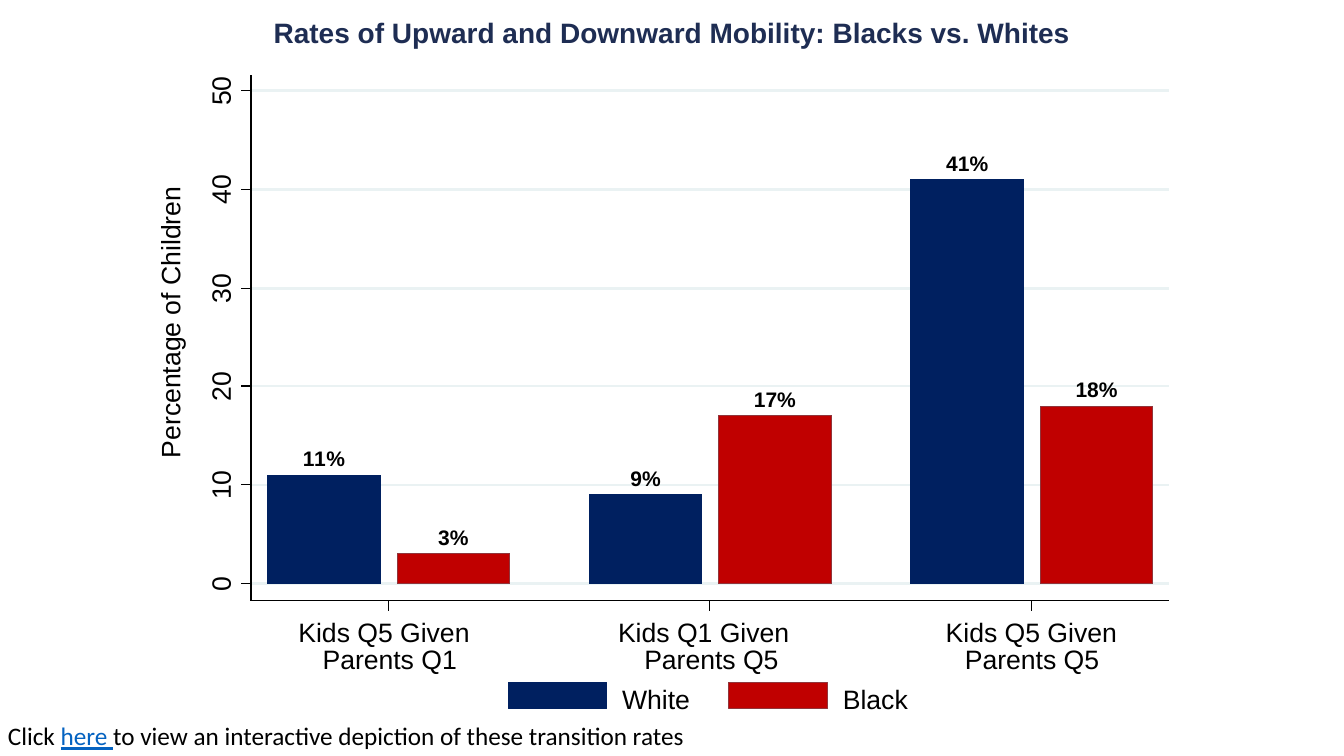
from lxml.etree import SubElement
from pptx import Presentation
from pptx.chart.data import CategoryChartData
from pptx.dml.color import RGBColor
from pptx.enum.chart import XL_CHART_TYPE, XL_LABEL_POSITION
from pptx.enum.shapes import MSO_CONNECTOR, MSO_SHAPE
from pptx.enum.text import MSO_AUTO_SIZE, PP_ALIGN
from pptx.oxml import parse_xml
from pptx.oxml.ns import nsdecls, qn
from pptx.util import Emu, Pt

PX = 9144
BLACK, NAVY, RED, MAROON = "000000", "002060", "C00000", "90353B"
GRID, TITLE, LINK = "EAF2F3", "1E2D53", "0563C1"

GROUPS = [("Kids Q5 Given", 296, "Parents Q1", 320),
          ("Kids Q1 Given", 613, "Parents Q5", 639),
          ("Kids Q5 Given", 938, "Parents Q5", 957)]
SERIES = [("White", (11, 9, 41), NAVY, NAVY, 504, 617),
          ("Black", (3, 17, 18), RED, MAROON, 723, 836)]
AXIS_LEFT, AXIS_RIGHT, AXIS_TOP, AXIS_BOTTOM = 249, 1159, 74, 596
ZERO, FIFTY = 579, 90
MIDDLE, GROUP_PITCH = 704, 319


def px(length):
    """Turn whole px into EMU."""
    return Emu(round(length * PX))


def color(code):
    """Turn a hex string into a colour."""
    return RGBColor.from_string(code)


class Board:
    """Holds the style and the current slide."""

    def __init__(self, page, font="Arial", size=19):
        """Remember the slide and its default text style."""
        self.page, self.font, self.size = page, font, size

    def line(self, x1, y1, x2, y2, shade=BLACK, width=0.88):
        """Draw a straight line."""
        rule = self.page.shapes.add_connector(
            MSO_CONNECTOR.STRAIGHT, px(x1), px(y1), px(x2), px(y2))
        rule.line.color.rgb = color(shade)
        rule.line.width = Pt(width)
        SubElement(rule.element.spPr, qn("a:effectLst"))

    def swatch(self, frame, fill, edge):
        """Draw a filled rectangle."""
        shape = self.page.shapes.add_shape(MSO_SHAPE.RECTANGLE, *map(px, frame))
        shape.shadow.inherit = False
        self.paint(shape, fill, edge)

    def paint(self, target, fill, edge):
        """Give a shape or a series its fill and hairline."""
        target.fill.solid()
        target.fill.fore_color.rgb = color(fill)
        target.line.color.rgb = color(edge)
        target.line.width = Pt(0)

    def text(self, frame, words, shade=BLACK, turn=0):
        """Place a one-line label without margins."""
        box = self.page.shapes.add_textbox(*map(px, frame))
        box.rotation = turn
        body = box.text_frame
        body.word_wrap = False
        body.auto_size = MSO_AUTO_SIZE.SHAPE_TO_FIT_TEXT
        body.margin_left = body.margin_right = body.margin_top = body.margin_bottom = 0
        body.text = words
        self.style(body.paragraphs[0].runs[0].font, shade)
        return box

    def style(self, font, shade, size=None, bold=False, name=None):
        """Set the look of a font."""
        font.name, font.size = name or self.font, Pt(size or self.size)
        font.bold, font.color.rgb = bold, color(shade)

    def heading(self, frame, words):
        """Place the centred slide title."""
        box = self.text(frame, words)
        body = box.text_frame
        body.word_wrap = True
        body.margin_left = body.margin_right = px(10)
        body.margin_top = body.margin_bottom = px(5)
        body.paragraphs[0].alignment = PP_ALIGN.CENTER
        self.style(body.paragraphs[0].runs[0].font, TITLE, 20, True)

    def footer(self, frame, pieces):
        """Place a line of differently coloured spans."""
        box = self.page.shapes.add_textbox(*map(px, frame))
        box.text_frame.word_wrap = False
        box.text_frame.auto_size = MSO_AUTO_SIZE.SHAPE_TO_FIT_TEXT
        for words, shade in pieces:
            span = box.text_frame.paragraphs[0].add_run()
            span.text = words
            self.style(span.font, shade, 18, name="Calibri")
            span.font.underline = shade == LINK

    def bars(self, frame):
        """Place the column chart so that its plot fills the frame."""
        data = CategoryChartData(number_format='0"%"')
        data.categories = [f"{kids} {parents}" for kids, _, parents, _ in GROUPS]
        for name, values, *_ in SERIES:
            data.add_series(name, values)
        chart = self.page.shapes.add_chart(
            XL_CHART_TYPE.COLUMN_CLUSTERED, *map(px, frame), data).chart
        chart.has_title = chart.has_legend = False
        self.style(chart.font, BLACK, 15, True)
        chart.value_axis.minimum_scale, chart.value_axis.maximum_scale = 0, 50
        chart.value_axis.has_major_gridlines = False
        chart.value_axis.visible = chart.category_axis.visible = False
        plot = chart.plots[0]
        plot.vary_by_categories = False
        plot.gap_width, plot.overlap = 71, -15
        plot.has_data_labels = True
        labels = plot.data_labels
        labels.show_value = True
        labels.number_format, labels.number_format_is_linked = '0"%"', False
        labels.position = XL_LABEL_POSITION.OUTSIDE_END
        self.style(labels.font, BLACK, 15, True)
        for series, (_, _, fill, edge, *_) in zip(plot.series, SERIES):
            series.invert_if_negative = False
            self.paint(series.format, fill, edge)
        self.fit_plot(chart)

    def fit_plot(self, chart):
        """Stretch the plot over the frame and clear the backgrounds."""
        area = chart.element.find(".//" + qn("c:plotArea"))
        for layout in area.findall(qn("c:layout")):
            area.remove(layout)
        settings = [("layoutTarget", "inner"), ("xMode", "edge"), ("yMode", "edge"),
                    ("x", 0), ("y", 0), ("w", 1), ("h", 1)]
        inner = "".join(f'<c:{tag} val="{value}"/>' for tag, value in settings)
        area.insert(0, parse_xml(
            f'<c:layout {nsdecls("c")}><c:manualLayout>{inner}</c:manualLayout></c:layout>'))
        clear = (f'<c:spPr {nsdecls("c", "a")}><a:noFill/>'
                 '<a:ln><a:noFill/></a:ln></c:spPr>')
        area.append(parse_xml(clear))
        chart.element.find(qn("c:chart")).addnext(parse_xml(clear))


def main():
    """Build the mobility slide."""
    deck = Presentation()
    deck.slide_width, deck.slide_height = px(1333), px(750)
    board = Board(deck.slides.add_slide(deck.slide_layouts[6]))

    ticks = [(value, round(ZERO + (FIFTY - ZERO) * value / 50))
             for value in range(0, 51, 10)]
    for _, y in ticks:
        board.line(AXIS_LEFT, y, AXIS_RIGHT, y, GRID, 1.75)
    width = 3 * GROUP_PITCH
    board.bars((MIDDLE - width // 2, FIFTY, width, ZERO - FIFTY))

    board.line(AXIS_LEFT, AXIS_BOTTOM, AXIS_LEFT, AXIS_TOP)
    for value, y in ticks:
        board.line(AXIS_LEFT, y, AXIS_LEFT - 10, y)
        length = 41 if value else 26
        board.text((220 - length / 2, y - 23, length, 35), str(value), turn=270)
    board.text((32, 302, 273, 32), "Percentage of Children", turn=270)

    board.line(AXIS_LEFT, AXIS_BOTTOM, AXIS_RIGHT, AXIS_BOTTOM)
    for index, (kids, kids_left, parents, parents_left) in enumerate(GROUPS):
        x = MIDDLE + (index - 1) * GROUP_PITCH
        board.line(x, AXIS_BOTTOM, x, AXIS_BOTTOM + 10)
        board.text((kids_left, 611, 172, 32), kids)
        board.text((parents_left, 638, 144, 35), parents)
    for name, _, fill, edge, key_left, name_left in SERIES:
        board.swatch((key_left, 677, 98, 26), fill, edge)
        board.text((name_left, 677, 78, 35), name)

    board.heading((0, 10, 1333, 44),
                  "Rates of Upward and Downward Mobility: Blacks vs. Whites")
    board.footer((-2, 710, 699, 40), [
        ("Click ", BLACK), ("here ", LINK),
        ("to view an interactive depiction of these transition rates", BLACK)])
    deck.save("out.pptx")


if __name__ == "__main__":
    main()
